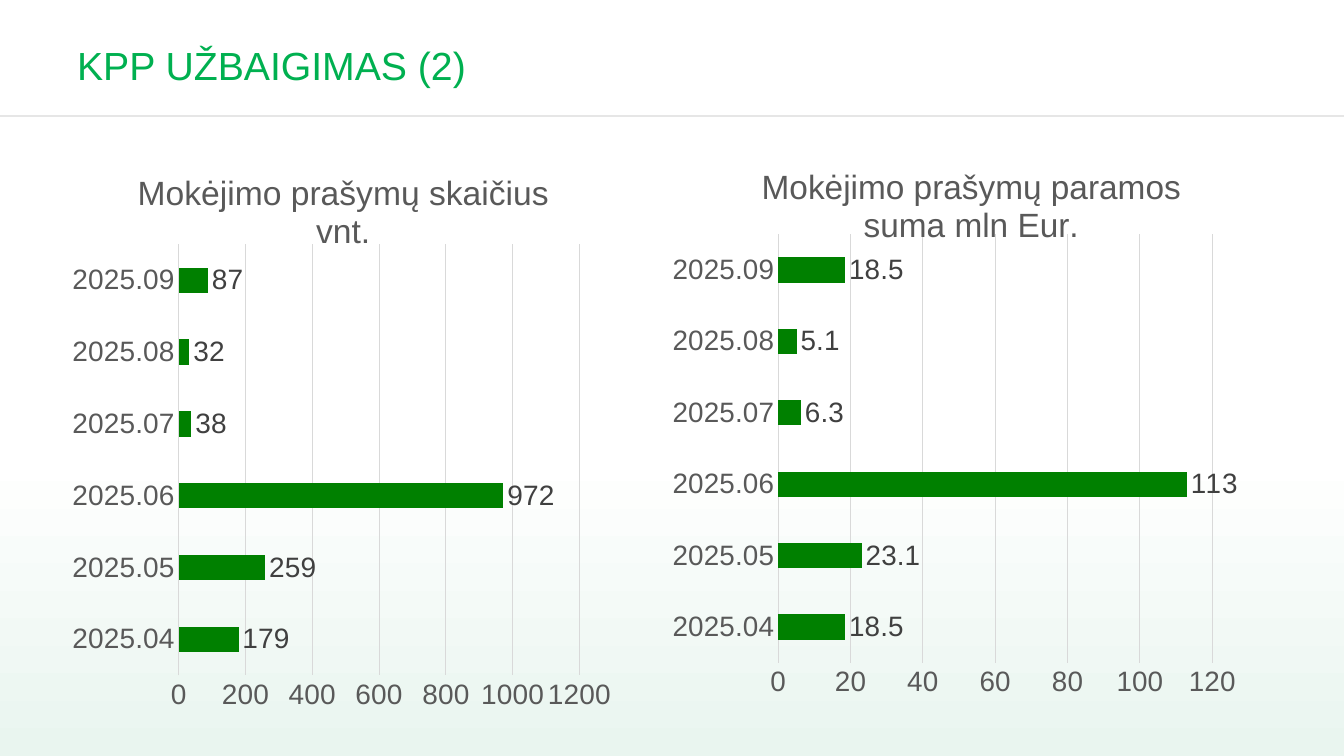
from pptx import Presentation
from pptx.chart.data import CategoryChartData
from pptx.dml.color import RGBColor as RGB
from pptx.enum.chart import XL_CHART_TYPE as CT, XL_LABEL_POSITION as LP, XL_TICK_MARK as TM
from pptx.enum.shapes import MSO_CONNECTOR as MC, MSO_SHAPE as MS
from pptx.enum.text import MSO_ANCHOR as MA
from pptx.oxml import parse_xml
from pptx.oxml.ns import nsdecls, qn
from pptx.util import Inches, Pt
from lxml.etree import SubElement

THEME = dict(
    font="Arial", heading=28, chart_title=24, label=20,
    green=RGB(0x00, 0xB0, 0x50), bar=RGB(0x00, 0x80, 0x00),
    text=RGB(0x59, 0x59, 0x59), value=RGB(0x40, 0x40, 0x40),
    grid=RGB(0xD9, 0xD9, 0xD9), rule=RGB(0xE6, 0xE6, 0xE6),
    mint=RGB(0xE9, 0xF5, 0xEF), white=RGB(0xFF, 0xFF, 0xFF))


def style(font, size, color):
    font.name, font.size, font.bold = THEME["font"], Pt(THEME[size]), False
    font.color.rgb = THEME[color]


def manual_layout(**values):
    tags = "".join(f'<c:{tag} val="{val}"/>' for tag, val in values.items())
    return parse_xml(f'<c:layout {nsdecls("c")}><c:manualLayout>{tags}'
                     '</c:manualLayout></c:layout>')


prs = Presentation()
prs.slide_width, prs.slide_height = Inches(13.33), Inches(7.5)
W, H = prs.slide_width, prs.slide_height
s = prs.slides.add_slide(prs.slide_layouts[6])

# Backdrop: mint at the bottom fading to white
sp = s.shapes.add_shape(MS.RECTANGLE, 0, 0, W, H)
sp.shadow.inherit = False
sp.line.fill.background()
sp.fill.gradient()
sp.fill.gradient_angle = 90
for stop, color, position in zip(sp.fill.gradient_stops, ("mint", "white"), (0, 0.4)):
    stop.color.rgb, stop.position = THEME[color], position

# Rule under the heading
rule_y = Inches(1.15)
rule = s.shapes.add_connector(MC.STRAIGHT, 0, rule_y, W, rule_y)
rule.line.color.rgb, rule.line.width = THEME["rule"], Pt(1)
SubElement(rule._element.spPr, qn("a:effectLst"))

# Heading
tf = s.shapes.add_textbox(int(W * 0.05), Inches(0.23), int(W * 0.7), Inches(0.92)).text_frame
tf.word_wrap, tf.vertical_anchor = True, MA.MIDDLE
p = tf.paragraphs[0]
p.text, p.line_spacing = "KPP UŽBAIGIMAS (2)", 0.8
style(p.font, "heading", "green")

# Charts: title, values, left, width, axis maximum, axis step, title place, plot area
months = [f"2025.{month:02}" for month in range(4, 10)]
charts = [
    ("Mokėjimo prašymų skaičius vnt.", (179, 259, 972, 38, 32, 87),
     0.44, 5.77, 1200, 200, (0.15, 0.05), (0.231, 0.183, 0.689, 0.721)),
    ("Mokėjimo prašymų paramos suma mln Eur.", (18.5, 23.1, 113, 6.3, 5.1, 18.5),
     6.67, 5.64, 120, 20, (0.14, 0.04), (0.18, 0.166, 0.769, 0.717))]

for title, values, left, width, top_value, step, (tx, ty), (x, y, w, h) in charts:
    data = CategoryChartData()
    data.categories = months
    data.add_series(title, values)
    chart = s.shapes.add_chart(CT.BAR_CLUSTERED, Inches(left), Inches(1.34),
                               Inches(width), Inches(5.93), data).chart
    chart.has_legend = False
    style(chart.font, "label", "text")

    # Title
    tf = chart.chart_title.text_frame
    tf.text = title
    style(tf.paragraphs[0].font, "chart_title", "text")
    chart.chart_title.include_in_layout = False
    title_el = chart.chart_title._element
    for old in title_el.findall(qn("c:layout")):
        title_el.remove(old)
    title_el.find(qn("c:tx")).addnext(manual_layout(xMode="edge", yMode="edge", x=tx, y=ty))

    # Plot area
    plot_el = chart._chartSpace.chart.plotArea
    for old in plot_el.findall(qn("c:layout")):
        plot_el.remove(old)
    plot_el.insert(0, manual_layout(layoutTarget="inner", xMode="edge", yMode="edge",
                                    x=x, y=y, w=w, h=h))

    # Axes
    for axis in (chart.category_axis, chart.value_axis):
        axis.major_tick_mark = axis.minor_tick_mark = TM.NONE
        style(axis.tick_labels.font, "label", "text")
    months_axis, value_axis = chart.category_axis, chart.value_axis
    value_axis.minimum_scale, value_axis.maximum_scale = 0, top_value
    value_axis.major_unit = step
    value_axis.has_major_gridlines = True
    value_axis.format.line.fill.background()
    for line in (months_axis.format.line, value_axis.major_gridlines.format.line):
        line.color.rgb, line.width = THEME["grid"], Pt(0.75)

    # Bars and their values
    plot = chart.plots[0]
    plot.gap_width, plot.vary_by_categories = 182, False
    fill = plot.series[0].format.fill
    fill.solid()
    fill.fore_color.rgb = THEME["bar"]
    plot.has_data_labels = True
    labels = plot.data_labels
    labels.show_value, labels.position = True, LP.OUTSIDE_END
    style(labels.font, "label", "value")

prs.save("out.pptx")
